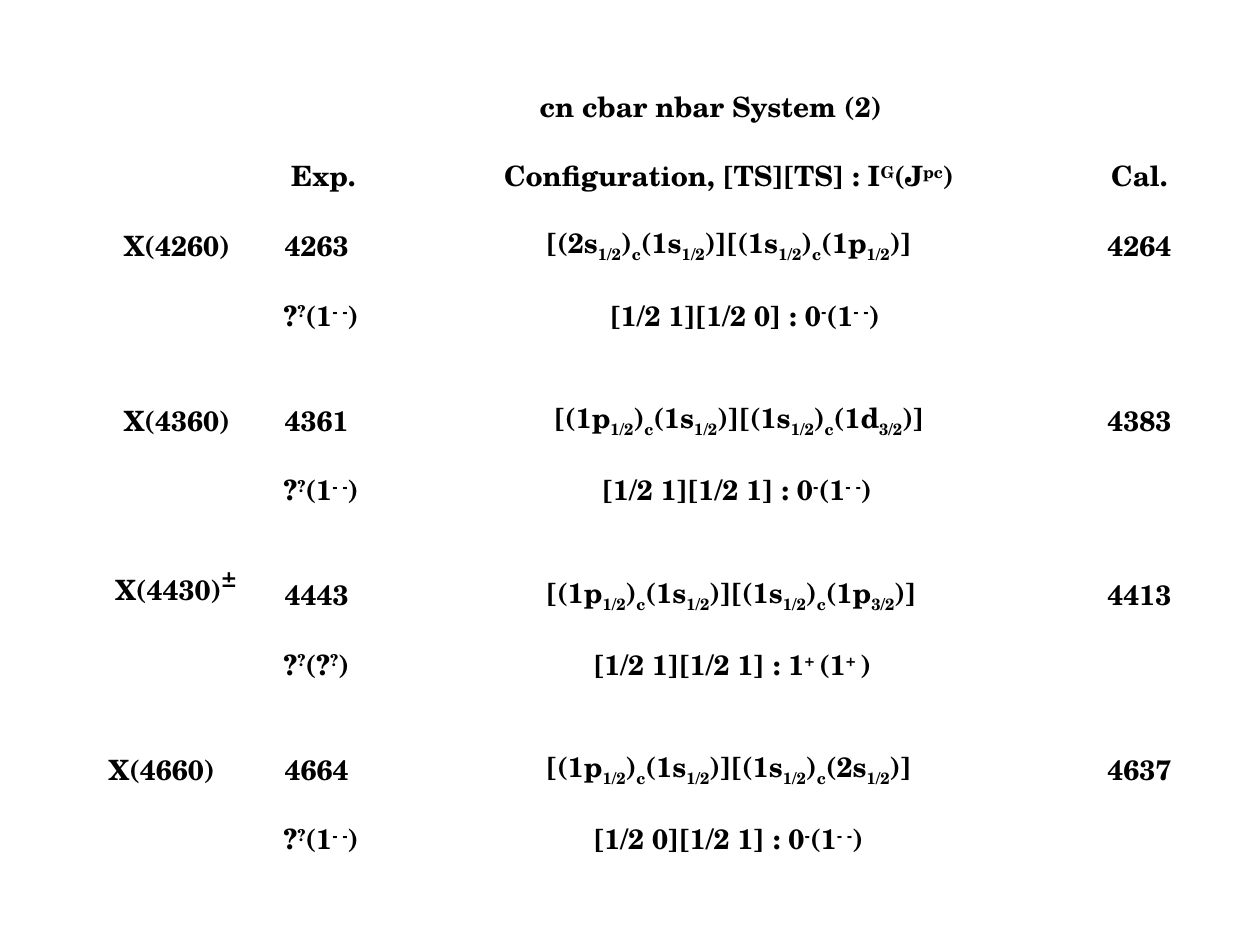
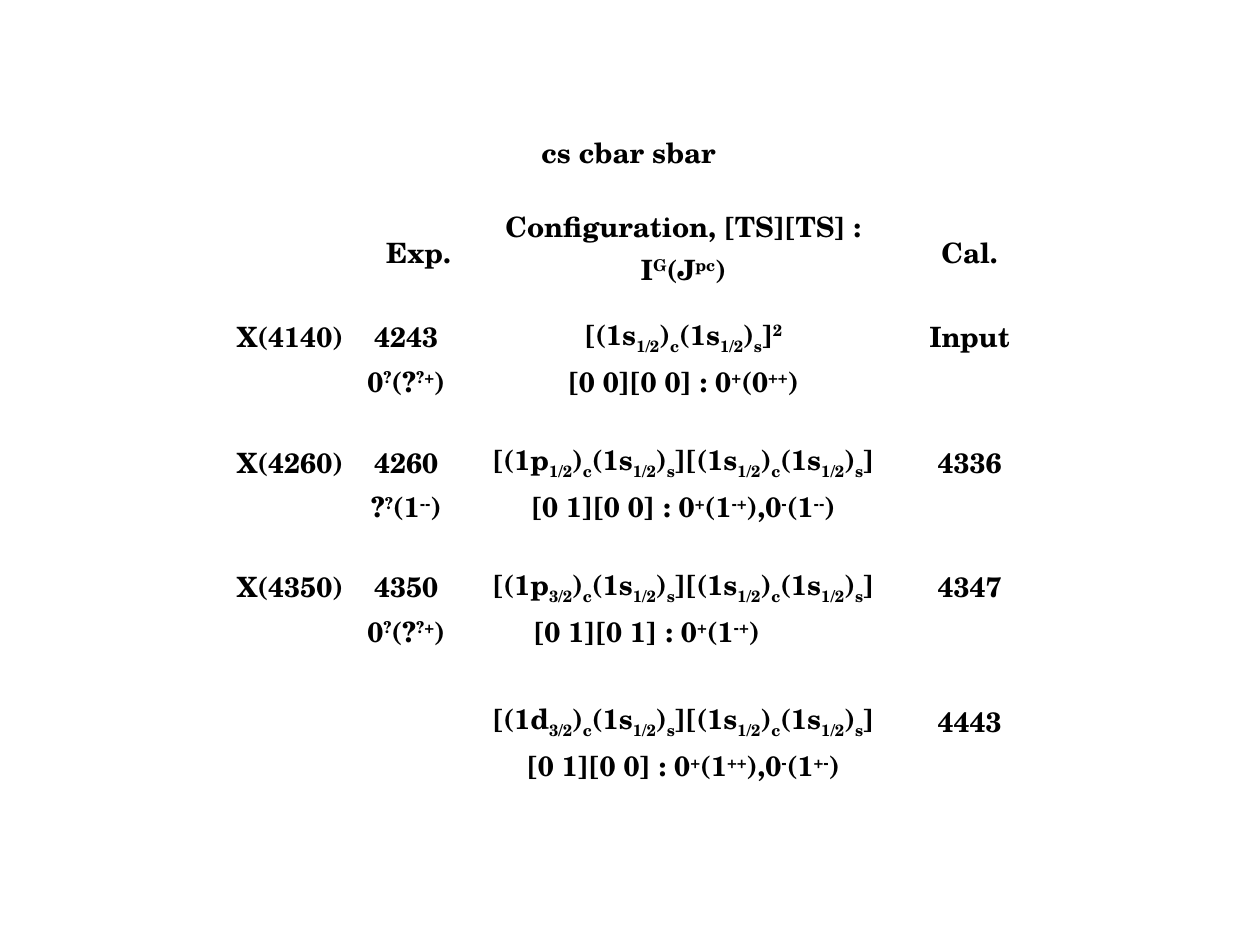
from pptx import Presentation
from pptx.dml.color import RGBColor
from pptx.enum import text
from pptx.util import Pt

COLOURS = {"ink": "000000", "paper": "FFFFFF"}
FONT = "TeX Gyre Schola"
TEXT_SIZE, CHARGE_SIZE, EMPTY_SIZE = 16, 24, 6
HEADING_LIFT = 9.7
BASELINES = {"^": "30000", "_": "-25000"}


def orbit(state, flavour=""):
    """Mark up a quark orbit; '|' parts the runs, '^' raises and '_' lowers one."""
    shell, spin = state.split()
    return f"({shell}|_{spin}|)" + (f"|_{flavour}|" if flavour else "")


def diquark(charm, light, flavour=""):
    return "[" + orbit(charm, "c") + orbit(light, flavour) + "]"


def cn(charm, light):
    return diquark(charm, light)


def cs(charm):
    return diquark(charm, "1s 1/2", "s")


# A cell is centred text, or (indent, text) for text set from the left.
EMPTY_ROW = ["", "", "", ""]
HEADING = "Configuration, [TS][TS] : I|^G|(J|^pc|)"
UNKNOWN_VECTOR = (23, "?|^?|(1|^- -|)")
UNKNOWN_PLUS = "0|^?|(?|^?+|)"

TABLES = [
    {
        "left": 46.8, "top": 33.12,
        "columns": [91.4, 85.7, 385.2, 84],
        "heights": [39.8] * 4 + [20.16] + [39.8, 39.8, 20.16] * 3,
        "title_span": (1, 2),
        "lifted": [],
        "rows": [
            ["", (169.4, "cn cbar nbar System (2)"), "", ""],
            ["", (27.5, "Exp."), HEADING, "Cal."],
            [(23.4, "X(4260)"), "4263",
             cn("2s 1/2", "1s 1/2") + cn("1s 1/2", "1p 1/2"), "4264"],
            ["", UNKNOWN_VECTOR, (124, "[1/2 1][1/2 0] : 0|^-|(1|^- -|)"), ""],
            EMPTY_ROW,
            [(23.4, "X(4360)"), "4361",
             (92, cn("1p 1/2", "1s 1/2") + cn("1s 1/2", "1d 3/2")), "4383"],
            ["", UNKNOWN_VECTOR, (119.5, "[1/2 1][1/2 1] : 0|^-|(1|^- -|)"), ""],
            EMPTY_ROW,
            [(18.5, "X(4430)|^±"), "4443",
             (87.5, cn("1p 1/2", "1s 1/2") + cn("1s 1/2", "1p 3/2")), "4413"],
            ["", (23, "?|^?|(?|^?|)"), (114.6, "[1/2 1][1/2 1] : 1|^+ |(1|^+ |)"), ""],
            EMPTY_ROW,
            ["X(4660)", "4664",
             (87.5, cn("1p 1/2", "1s 1/2") + cn("1s 1/2", "2s 1/2")), "4637"],
            ["", UNKNOWN_VECTOR, (114.6, "[1/2 0][1/2 1] : 0|^-|(1|^- -|)"), ""],
            EMPTY_ROW,
        ],
    },
    {
        "left": 130.2, "top": 74.16,
        "columns": [71.3, 61.2, 255.6, 71.5],
        "heights": [21.6, 16.6, 50, 11.7, 26.64, 24.48, 19.5, 25.2, 24.48, 19]
                   + [25.2, 25.2, 24.7, 25.2, 24.48],
        "title_span": None,
        "lifted": [(2, 1), (2, 3)],
        "rows": [
            ["", "", (46, "cs cbar sbar"), ""],
            EMPTY_ROW,
            ["", (18.5, "Exp."), HEADING, "Cal."],
            EMPTY_ROW,
            ["X(4140)", "4243", cs("1s 1/2") + "|^2", "Input"],
            ["", UNKNOWN_PLUS, "[0 0][0 0] : 0|^+|(0|^++|)", ""],
            EMPTY_ROW,
            ["X(4260)", "4260", cs("1p 1/2") + cs("1s 1/2"), "4336"],
            ["", "?|^?|(1|^--|)", "[0 1][0 0] : 0|^+|(1|^-+|),0|^-|(1|^--|)", ""],
            EMPTY_ROW,
            ["X(4350)", "4350", cs("1p 3/2") + cs("1s 1/2"), "4347"],
            ["", UNKNOWN_PLUS, (41.5, "[0 1][0 1] : 0|^+|(1|^-+|)"), ""],
            EMPTY_ROW,
            ["", "", cs("1d 3/2") + cs("1s 1/2"), "4443"],
            ["", "", "[0 1][0 0] : 0|^+|(1|^++|),0|^-|(1|^+-|)", ""],
        ],
    },
]


def add_runs(para, markup):
    for piece in filter(None, markup.split("|")):
        baseline = BASELINES.get(piece[0])
        span = para.add_run()
        span.text = piece[1:] if baseline else piece
        span.font.name = FONT
        span.font.size = Pt(CHARGE_SIZE if span.text == "±" else TEXT_SIZE)
        span.font.bold = True
        span.font.color.rgb = RGBColor.from_string(COLOURS["ink"])
        if baseline:
            span.font._element.set("baseline", baseline)


def fill_cell(cell, content):
    cell.fill.background()
    cell.vertical_anchor = text.MSO_ANCHOR.BOTTOM
    cell.margin_left = cell.margin_right = cell.margin_top = Pt(0.72)
    cell.margin_bottom = Pt(0)
    para = cell.text_frame.paragraphs[0]
    if not content:
        end = para._p.get_or_add_endParaRPr()
        end.set("sz", str(EMPTY_SIZE * 100))
        return
    if isinstance(content, tuple):
        indent, markup = content
        para.alignment = text.PP_ALIGN.LEFT
        para._p.get_or_add_pPr().set("marL", str(Pt(indent)))
    else:
        markup = content
        para.alignment = text.PP_ALIGN.CENTER
    add_runs(para, markup)


def add_spectrum(page, spec):
    columns, heights = spec["columns"], spec["heights"]
    table = page.shapes.add_table(
        len(heights), len(columns), Pt(spec["left"]), Pt(spec["top"]),
        Pt(sum(columns)), Pt(sum(heights))).table
    table.first_row = table.horz_banding = False
    for column, width in zip(table.columns, columns):
        column.width = Pt(width)
    for row, height, contents in zip(table.rows, heights, spec["rows"]):
        row.height = Pt(height)
        for cell, content in zip(row.cells, contents):
            fill_cell(cell, content)
    for place in spec["lifted"]:
        table.cell(*place).margin_bottom = Pt(HEADING_LIFT)
    if spec["title_span"]:
        first, last = spec["title_span"]
        table.cell(0, first).merge(table.cell(0, last))


def main():
    deck = Presentation()
    deck.slide_width, deck.slide_height = Pt(720), Pt(540)
    blank = deck.slide_layouts[6]
    for spectrum in TABLES:
        page = deck.slides.add_slide(blank)
        page.background.fill.solid()
        page.background.fill.fore_color.rgb = RGBColor.from_string(COLOURS["paper"])
        add_spectrum(page, spectrum)
    deck.save("out.pptx")


if __name__ == "__main__":
    main()
